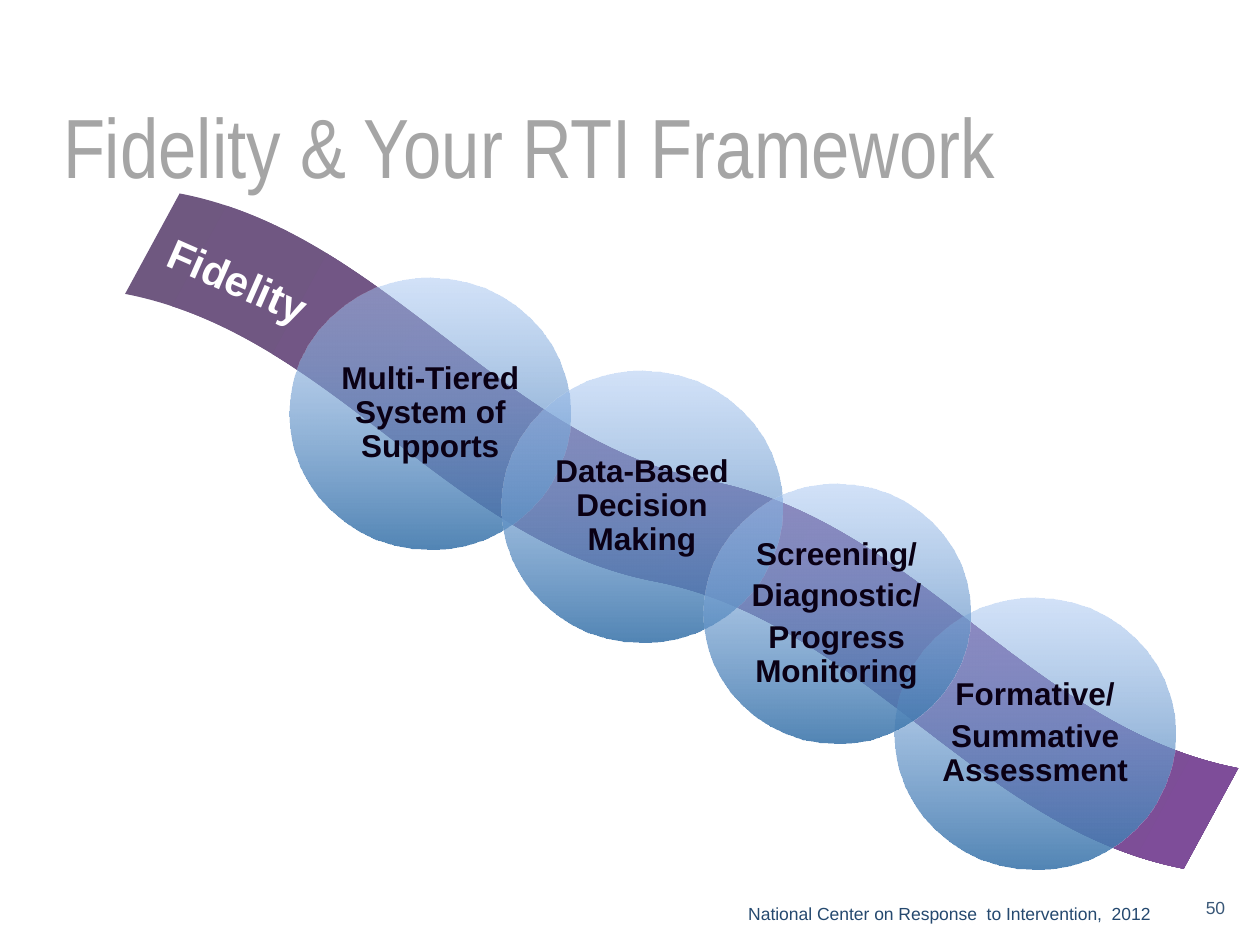
import math

import pptx
import pptx.dml.color
import pptx.enum.shapes
import pptx.enum.text
import pptx.oxml.ns
import pptx.util
from lxml import etree
from pptx.util import Inches

COLORS = {
    "title": "A5A5A5",
    "wave_start": "6F5880",
    "wave_end": "7E4D99",
    "wave_label": "FFFFFF",
    "circle_bottom": "3D76AC",
    "circle_top": "A4C4F1",
    "circle_label": "0A0014",
    "source": "25496F",
    "number": "3A5878",
}
STEPS = [
    ((2.3, 2.2, 2.23, 2.16), ["Multi-Tiered System of Supports"]),
    ((3.98, 2.94, 2.23, 2.16), ["Data-Based Decision Making"]),
    ((7.1, 4.74, 2.23, 2.16), ["Formative/", "Summative Assessment"]),
    ((5.58, 3.84, 2.12, 2.06),
     ["Screening/", "Diagnostic/", "Progress Monitoring"]),
]


def rgb(name):
    return pptx.dml.color.RGBColor.from_string(COLORS[name])


def add_run(paragraph, text, size, color, bold=False, font="Arial"):
    run = paragraph.add_run()
    run.text = text
    run.font.name = font
    run.font.size = pptx.util.Pt(size)
    run.font.bold = bold
    run.font.color.rgb = rgb(color)


def set_frame(frame, inset=(0, 0), wrap=True, anchor="TOP"):
    """Set horizontal and vertical inset in inches, wrapping and anchor."""
    frame.margin_left = frame.margin_right = Inches(inset[0])
    frame.margin_top = frame.margin_bottom = Inches(inset[1])
    frame.word_wrap = wrap
    frame.auto_size = pptx.enum.text.MSO_AUTO_SIZE.NONE
    frame.vertical_anchor = pptx.enum.text.MSO_ANCHOR[anchor]


def fill_gradient(shape, stops, angle):
    """Fill with (color, opacity percent) stops, angle counter-clockwise."""
    shape.shadow.inherit = False
    shape.line.fill.background()
    shape.fill.gradient()
    shape.fill.gradient_angle = angle
    for stop, (color, _) in zip(shape.fill.gradient_stops, stops):
        stop.color.rgb = rgb(color)
    color_tag = pptx.oxml.ns.qn("a:srgbClr")
    for element, (_, opacity) in zip(shape._element.iter(color_tag), stops):
        if opacity < 100:
            alpha = etree.SubElement(element, pptx.oxml.ns.qn("a:alpha"))
            alpha.set("val", str(opacity * 1000))


def add_title(slide, box):
    title = slide.shapes.title
    title.left, title.top, title.width, title.height = map(Inches, box)
    set_frame(title.text_frame)
    paragraph = title.text_frame.paragraphs[0]
    paragraph.alignment = pptx.enum.text.PP_ALIGN.LEFT
    paragraph.line_spacing = 0.9
    add_run(paragraph, "Fidelity & Your RTI Framework", 48, "title",
            font="Arial Narrow")


def add_wave(slide, box):
    left, top, width, height = box
    wave = slide.shapes.add_shape(
        pptx.enum.shapes.MSO_SHAPE.DOUBLE_WAVE, *map(Inches, box))
    wave.rotation = 28.5
    wave.adjustments[0] = 0.125
    wave.adjustments[1] = 0
    fill_gradient(wave, [("wave_start", 100), ("wave_end", 100)], 0)

    label = slide.shapes.add_textbox(
        Inches(left + 0.62), Inches(top - 1.62), Inches(1.41), Inches(0.28))
    label.rotation = 23.8
    set_frame(label.text_frame, (0.1, 0.05), wrap=False)
    add_run(label.text_frame.paragraphs[0], "Fidelity", 24, "wave_label",
            bold=True)


def add_circle(group, box, lines):
    """Draw a translucent circle with a label in its inscribed box."""
    left, top, width, height = box
    circle = group.shapes.add_shape(
        pptx.enum.shapes.MSO_SHAPE.OVAL, *map(Inches, box))
    fill_gradient(circle, [("circle_bottom", 89), ("circle_top", 49)], 90)

    inner = math.sqrt(0.5)
    margin = (1 - inner) / 2
    label = group.shapes.add_textbox(
        Inches(left + width * margin), Inches(top + height * margin),
        Inches(width * inner), Inches(height * inner))
    frame = label.text_frame
    set_frame(frame, anchor="MIDDLE")
    for index, line in enumerate(lines):
        paragraph = frame.add_paragraph() if index else frame.paragraphs[0]
        paragraph.alignment = pptx.enum.text.PP_ALIGN.CENTER
        paragraph.line_spacing = 0.9
        if index:
            paragraph.space_before = pptx.util.Pt(4.2)
        add_run(paragraph, line, 18, "circle_label", bold=True)


def add_footer(slide, box):
    left, top, width, height = box
    number = slide.shapes.add_textbox(
        Inches(left + width - 0.17), Inches(top), Inches(0.17), Inches(0.17))
    set_frame(number.text_frame, wrap=False, anchor="BOTTOM")
    add_run(number.text_frame.paragraphs[0], "50", 10, "number")

    source = slide.shapes.add_textbox(
        Inches(left), Inches(top), Inches(3.56), Inches(height))
    set_frame(source.text_frame, (0.1, 0.05))
    add_run(source.text_frame.paragraphs[0],
            "National Center on Response  to Intervention,  2012",
            10, "source")


def main():
    presentation = pptx.Presentation()
    presentation.slide_width = Inches(10)
    presentation.slide_height = Inches(7.5)
    slide = presentation.slides.add_slide(presentation.slide_layouts[5])
    add_wave(slide, (0.63, 3.61, 9.56, 1.21))
    add_title(slide, (0.5, 0.84, 8.99, 1.15))
    group = slide.shapes.add_group_shape()
    for box, lines in STEPS:
        add_circle(group, box, lines)
    add_footer(slide, (5.84, 7.12, 3.9, 0.27))
    presentation.save("out.pptx")


if __name__ == "__main__":
    main()
